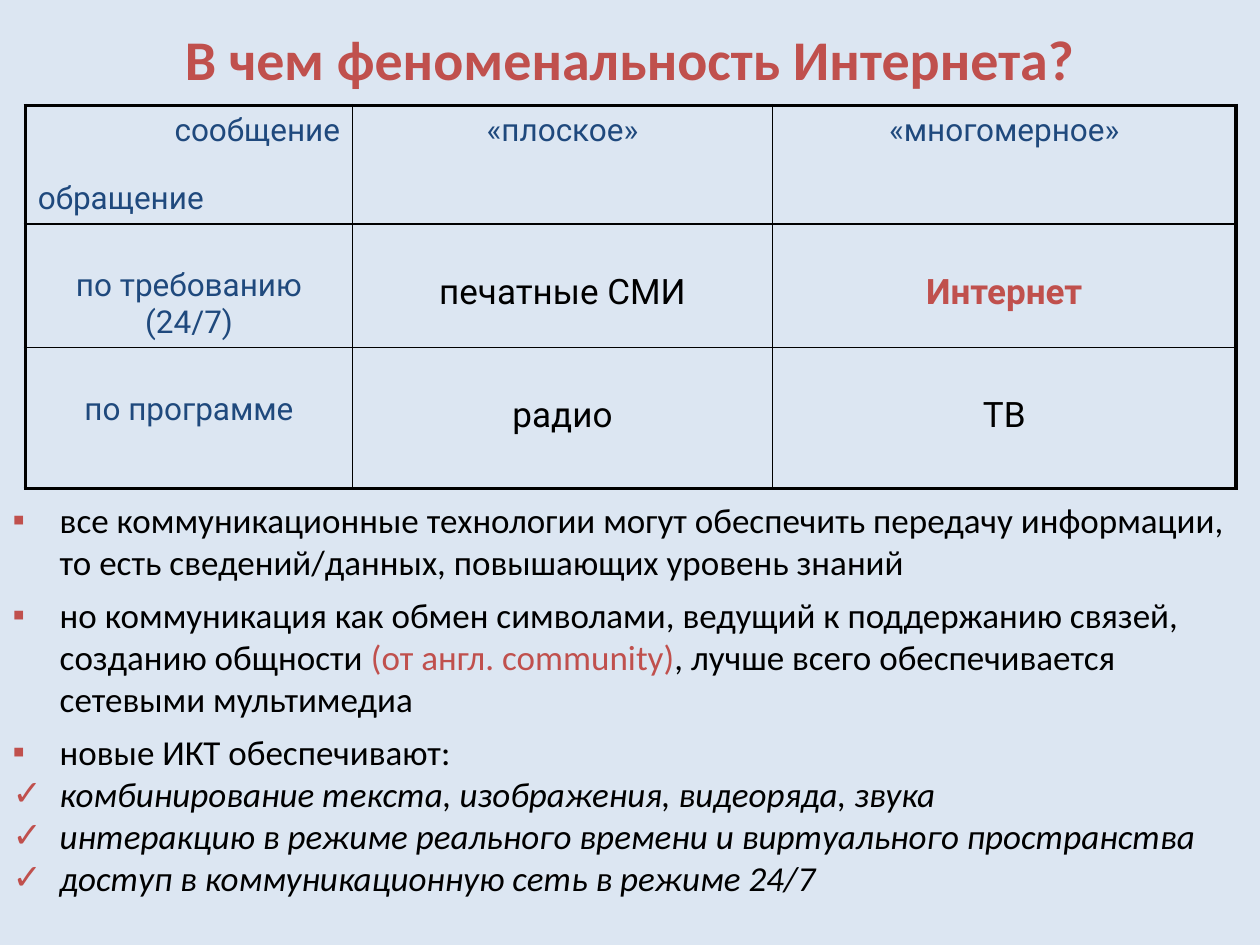
"""Build a slide on what makes the Internet a phenomenon."""
from lxml import etree
from pptx import Presentation
from pptx.dml.color import RGBColor
from pptx.enum.text import MSO_ANCHOR, MSO_AUTO_SIZE, PP_ALIGN
from pptx.oxml.ns import qn
from pptx.util import Cm, Pt

LEFT, CENTER, RIGHT = PP_ALIGN.LEFT, PP_ALIGN.CENTER, PP_ALIGN.RIGHT
TOP, MIDDLE = MSO_ANCHOR.TOP, MSO_ANCHOR.MIDDLE
NO_AUTOFIT = MSO_AUTO_SIZE.NONE

BACKGROUND, ACCENT, HEADING, BLACK = "DCE6F2", "C0504D", "1F497D", "000000"
OUTER_LINE, INNER_LINE = 2.25, 1
COLUMN_WIDTHS = [6.6, 8.46, 9.35]
ROW_HEIGHTS = [2.39, 2.49, 2.84]
HEADING_DROP, MEDIUM_DROP = 0.87, 0.96

HEADINGS = ["«плоское»", "«многомерное»"]
ROWS = [
    ("по требованию (24/7)", ["печатные СМИ", "Интернет"]),
    ("по программе", ["радио", "ТВ"]),
]
HIGHLIGHT = "Интернет"

STATEMENTS = [
    [("все коммуникационные технологии могут обеспечить передачу информации, "
      "то есть сведений/данных, повышающих уровень знаний", BLACK)],
    [("но коммуникация как обмен символами, ведущий к поддержанию связей, "
      "созданию общности ", BLACK),
     ("(от англ. community)", ACCENT),
     (", лучше всего обеспечивается сетевыми мультимедиа", BLACK)],
    [("новые ИКТ обеспечивают:", BLACK)],
]
BENEFITS = [
    "комбинирование текста, изображения, видеоряда, звука",
    "интеракцию в режиме реального времени и виртуального пространства",
    "доступ в коммуникационную сеть в режиме 24/7",
]


def rgb(value):
    """Turn a hex string into a colour."""
    return RGBColor.from_string(value)


def write(paragraph, text, *, size, color=BLACK, font="Calibri", bold=False,
          italic=False, align=LEFT, before=0):
    """Add a formatted run to a paragraph."""
    paragraph.alignment = align
    paragraph.space_before = Pt(before)
    run = paragraph.add_run()
    run.text = text
    run.font.name = font
    run.font.size = Pt(size)
    run.font.bold = bold
    run.font.italic = italic
    run.font.color.rgb = rgb(color)


def place(placeholder, left, top, width, height, anchor):
    """Move a placeholder and return its text frame."""
    placeholder.left, placeholder.top = Cm(left), Cm(top)
    placeholder.width, placeholder.height = Cm(width), Cm(height)
    frame = placeholder.text_frame
    frame.auto_size = NO_AUTOFIT
    frame.word_wrap = True
    frame.vertical_anchor = anchor
    return frame


def set_bullet(paragraph, mark):
    """Give a paragraph a hanging accent-coloured bullet."""
    properties = paragraph._p.get_or_add_pPr()
    properties.set("marL", str(Cm(0.95)))
    properties.set("indent", str(-Cm(0.95)))
    color = etree.SubElement(properties, qn("a:buClr"))
    etree.SubElement(color, qn("a:srgbClr"), val=ACCENT)
    etree.SubElement(properties, qn("a:buChar"), char=mark)


def set_borders(cell, widths):
    """Draw the cell edges with the given widths in points."""
    properties = cell._tc.get_or_add_tcPr()
    for edge, width in widths.items():
        line = etree.SubElement(properties, qn(f"a:ln{edge}"), w=str(Pt(width)))
        fill = etree.SubElement(line, qn("a:solidFill"))
        etree.SubElement(fill, qn("a:srgbClr"), val=BLACK)


def frame_cells(table):
    """Give the table thick outer and thin inner lines and no fill."""
    last_row, last_column = len(ROW_HEIGHTS) - 1, len(COLUMN_WIDTHS) - 1
    for row in range(last_row + 1):
        for column in range(last_column + 1):
            outer = {"L": column == 0, "R": column == last_column,
                     "T": row == 0, "B": row == last_row}
            cell = table.cell(row, column)
            set_borders(cell, {edge: OUTER_LINE if thick else INNER_LINE
                               for edge, thick in outer.items()})
            cell.fill.background()
            cell.vertical_anchor = TOP


def write_cell(cell, text, *, drop=0.13, **style):
    """Write centred cell text, lowered by the top margin."""
    cell.margin_top = Cm(drop)
    write(cell.text_frame.paragraphs[0], text, font="Roboto", align=CENTER, **style)


def add_media_table(slide):
    """Add the table that sorts media by message and by access."""
    table = slide.shapes.add_table(
        len(ROW_HEIGHTS), len(COLUMN_WIDTHS), Cm(0.51), Cm(2.13),
        Cm(sum(COLUMN_WIDTHS)), Cm(sum(ROW_HEIGHTS))).table
    table.first_row = table.horz_banding = False
    for column, width in zip(table.columns, COLUMN_WIDTHS):
        column.width = Cm(width)
    for row, height in zip(table.rows, ROW_HEIGHTS):
        row.height = Cm(height)
    frame_cells(table)

    corner = table.cell(0, 0).text_frame
    heading = {"size": 18, "color": HEADING}
    write(corner.paragraphs[0], "сообщение", font="Roboto", align=RIGHT, **heading)
    write(corner.add_paragraph(), "обращение", font="Roboto", before=18, **heading)
    for column, message in enumerate(HEADINGS, 1):
        write_cell(table.cell(0, column), message, **heading)
    for row, (access, media) in enumerate(ROWS, 1):
        write_cell(table.cell(row, 0), access, drop=HEADING_DROP, **heading)
        for column, medium in enumerate(media, 1):
            special = medium == HIGHLIGHT
            write_cell(table.cell(row, column), medium, drop=MEDIUM_DROP, size=20,
                       color=ACCENT if special else BLACK, bold=special)


def fill_conclusions(frame):
    """Write the statements and the list of benefits."""
    items = [("▪", parts, False) for parts in STATEMENTS]
    items += [("✓", [(benefit, BLACK)], True) for benefit in BENEFITS]
    for number, (mark, parts, italic) in enumerate(items):
        paragraph = frame.add_paragraph() if number else frame.paragraphs[0]
        set_bullet(paragraph, mark)
        before = 6 if number and not italic else 0
        for text, color in parts:
            write(paragraph, text, size=20, color=color, italic=italic, before=before)


def main():
    """Build and save the slide."""
    deck = Presentation()
    deck.slide_width, deck.slide_height = Cm(25.4), Cm(19.05)
    slide = deck.slides.add_slide(deck.slide_layouts[1])
    slide.background.fill.solid()
    slide.background.fill.fore_color.rgb = rgb(BACKGROUND)

    title = place(slide.shapes.title, 0, 0, 25.4, 2.34, MIDDLE)
    write(title.paragraphs[0], "В чем феноменальность Интернета?", size=32,
          color=ACCENT, bold=True, align=CENTER)
    add_media_table(slide)
    fill_conclusions(place(slide.placeholders[1], 0, 9.93, 25.4, 9.12, TOP))
    deck.save("out.pptx")


if __name__ == "__main__":
    main()
